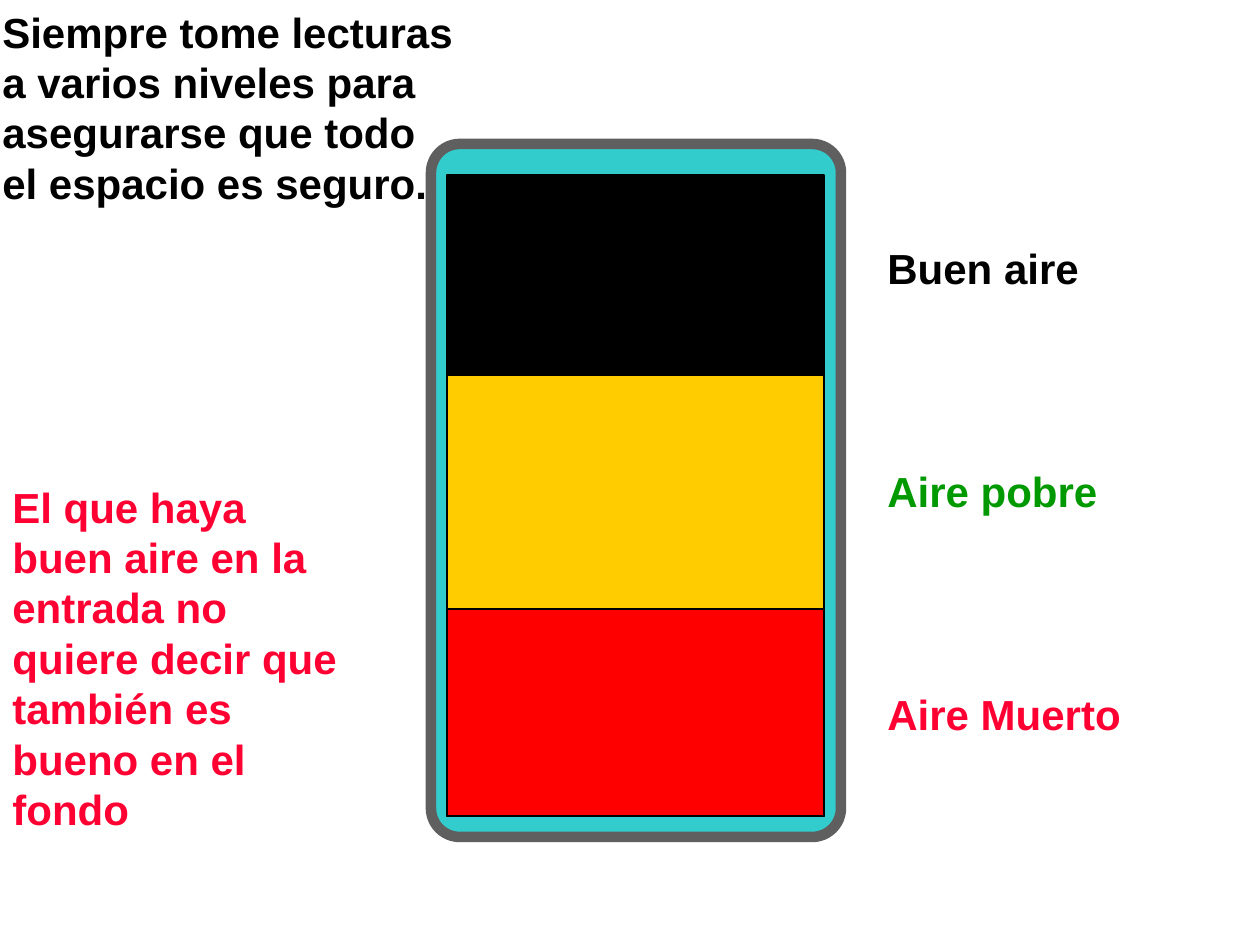
from pptx import Presentation
from pptx.dml.color import RGBColor
from pptx.enum.shapes import MSO_SHAPE
from pptx.enum.text import MSO_AUTO_SIZE, PP_ALIGN
from pptx.util import Pt

COLORS = {
    "black": "000000", "tank": "33CCCC", "wall": "5F5F5F",
    "yellow": "FFCC00", "red": "FF0000", "green": "009900", "warning": "FF0033",
}


def px(value):
    return round(value * 914400 / 126)


def add_block(kind, left, top, width, height, fill, line, weight):
    block = page.shapes.add_shape(kind, px(left), px(top), px(width), px(height))
    block.shadow.inherit = False
    block.fill.solid()
    block.fill.fore_color.rgb = RGBColor.from_string(COLORS[fill])
    block.line.color.rgb = RGBColor.from_string(COLORS[line])
    block.line.width = Pt(weight)
    return block


deck = Presentation()
deck.slide_width, deck.slide_height = px(1260), px(945)
page = deck.slides.add_slide(deck.slide_layouts[6])

# Confined space with rounded walls
tank = add_block(MSO_SHAPE.ROUNDED_RECTANGLE, 431, 144, 410, 693, "tank", "wall", 6)
tank.adjustments[0] = 0.07

# Air layers: each reaches the floor and covers the lower part of the one before
floor = 816
for top, color in ((175, "black"), (375, "yellow"), (609, "red")):
    add_block(MSO_SHAPE.RECTANGLE, 447, top, 377, floor - top, color, "black", 1)

# Layer labels and advice: left, top, width, height, wrap, color, text
advice = ("Siempre tome lecturas\na varios niveles para\n"
          "asegurarse que todo\nel espacio es seguro.")
warning = ("El que haya buen aire en la entrada no quiere decir "
           "que también es bueno en el fondo")
texts = [
    (875, 236, 247, 63, True, "black", "Buen aire"),
    (875, 459, 272, 63, True, "green", "Aire pobre"),
    (875, 682, 261, 63, False, "warning", "Aire Muerto"),
    (0, 475, 357, 365, True, "warning", warning),
    (-10, 0, 476, 265, False, "black", advice),
]
for left, top, width, height, wrap, color, text in texts:
    box = page.shapes.add_textbox(px(left), px(top), px(width), px(height))
    frame = box.text_frame
    frame.text = text
    frame.word_wrap = wrap
    frame.auto_size = MSO_AUTO_SIZE.SHAPE_TO_FIT_TEXT
    for paragraph in frame.paragraphs:
        paragraph.alignment = PP_ALIGN.LEFT
        for span in paragraph.runs:
            span.font.name = "Arial"
            span.font.size = Pt(24)
            span.font.bold = True
            span.font.color.rgb = RGBColor.from_string(COLORS[color])

deck.save("out.pptx")
